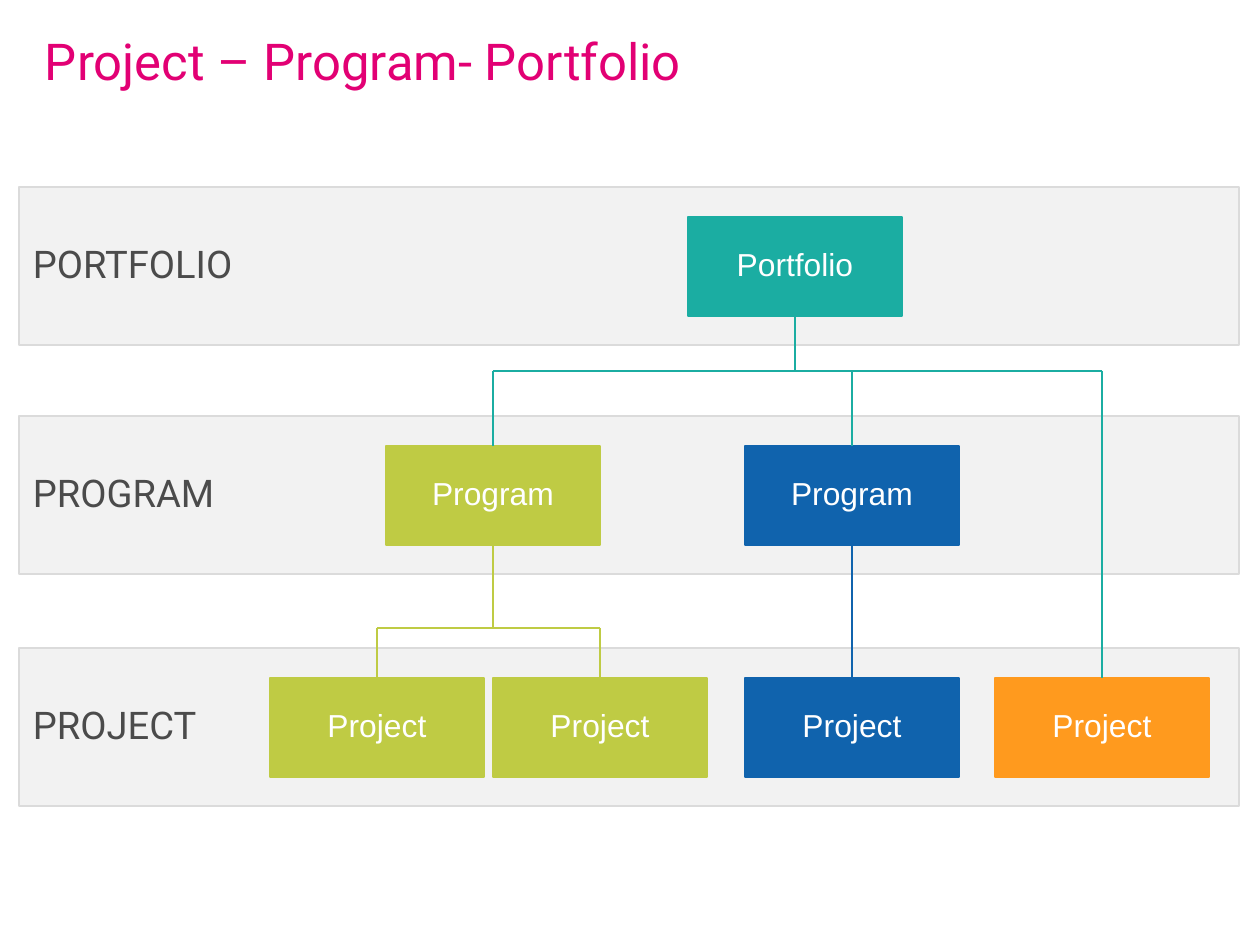
from pptx import Presentation
from pptx.dml.color import RGBColor
from pptx.enum.shapes import MSO_CONNECTOR, MSO_SHAPE
from pptx.enum.text import MSO_ANCHOR, PP_ALIGN
from pptx.util import Emu, Pt
from lxml import etree

PX = 8000
COLORS = {
    "magenta": "E20074", "band": "F2F2F2", "border": "DBDBDB", "label": "4B4B4B",
    "teal": "1BADA2", "lime": "BFCB44", "blue": "1063AD", "orange": "FF9A1E",
    "white": "FFFFFF",
}
BAND_LEFT, BAND_WIDTH, BAND_HEIGHT = 19, 1220, 158
BOX_WIDTH, BOX_HEIGHT, BOX_DROP = 214, 99, 30
INSET = 14
TOP, BOTTOM = 0, 2

deck = Presentation()
deck.slide_width, deck.slide_height = Emu(1260 * PX), Emu(945 * PX)
page = deck.slides.add_slide(deck.slide_layouts[6])


def write(shape, text, size, font, color, align, anchor, inset):
    frame = shape.text_frame
    frame.word_wrap = True
    frame.vertical_anchor = anchor
    frame.margin_left = frame.margin_right = Emu(inset * PX)
    frame.margin_top = frame.margin_bottom = Emu(inset * PX)
    para = frame.paragraphs[0]
    para.alignment = align
    para.line_spacing = 0.9
    span = para.add_run()
    span.text = text
    span.font.size = Pt(size)
    span.font.name = font
    span.font.color.rgb = RGBColor.from_string(COLORS[color])


def add_box(left, top, width, height, fill, border):
    box = page.shapes.add_shape(
        MSO_SHAPE.RECTANGLE, *(Emu(n * PX) for n in (left, top, width, height)))
    box.shadow.inherit = False
    box.fill.solid()
    box.fill.fore_color.rgb = RGBColor.from_string(COLORS[fill])
    box.line.color.rgb = RGBColor.from_string(COLORS[border])
    box.line.width = Pt(1.5)
    return box


title = page.shapes.add_textbox(*(Emu(n * PX) for n in (45, 37, 1170, 73)))
write(title, "Project – Program- Portfolio", 32, "Roboto", "magenta",
      PP_ALIGN.LEFT, MSO_ANCHOR.TOP, 0)

band_tops = {"PORTFOLIO": 187, "PROGRAM": 416, "PROJECT": 648}
for label, top in band_tops.items():
    band = add_box(BAND_LEFT, top, BAND_WIDTH, BAND_HEIGHT, "band", "border")
    write(band, label, 24, "Roboto", "label", PP_ALIGN.LEFT, MSO_ANCHOR.MIDDLE, INSET)

# Name: level, centre x, colour
nodes = {
    "portfolio": ("Portfolio", 795, "teal"),
    "lime program": ("Program", 493, "lime"),
    "blue program": ("Program", 852, "blue"),
    "lime project 1": ("Project", 377, "lime"),
    "lime project 2": ("Project", 600, "lime"),
    "blue project": ("Project", 852, "blue"),
    "orange project": ("Project", 1102, "orange"),
}
boxes = {}
for name, (level, center, color) in nodes.items():
    top = band_tops[level.upper()] + BOX_DROP
    boxes[name] = add_box(center - BOX_WIDTH // 2, top, BOX_WIDTH, BOX_HEIGHT, color, color)
    write(boxes[name], level, 20, "Arial", "white", PP_ALIGN.CENTER, MSO_ANCHOR.MIDDLE, INSET)

# Each line: start x, start y, end x, end y, colour, box above, box below
lines = [(852, 545, 852, 678, "blue", "blue program", "blue project")]
branches = [
    ("portfolio", 371, ["lime program", "blue program", "orange project"]),
    ("lime program", 628, ["lime project 1", "lime project 2"]),
]
for parent, bus, children in branches:
    level, center, color = nodes[parent]
    parent_bottom = band_tops[level.upper()] + BOX_DROP + BOX_HEIGHT
    lines.append((center, parent_bottom, center, bus, color, parent, None))
    lines.append((nodes[children[0]][1], bus, nodes[children[-1]][1], bus, color, None, None))
    for child in children:
        child_level, x, _ = nodes[child]
        child_top = band_tops[child_level.upper()] + BOX_DROP
        lines.append((x, bus, x, child_top, color, None, child))

for *ends, color, above, below in lines:
    line = page.shapes.add_connector(MSO_CONNECTOR.STRAIGHT, *(Emu(n * PX) for n in ends))
    line.line.color.rgb = RGBColor.from_string(COLORS[color])
    line.line.width = Pt(1.5)
    properties = line._element.spPr
    etree.SubElement(properties, "{http://schemas.openxmlformats.org/drawingml/2006/main}effectLst")
    if above:
        line.begin_connect(boxes[above], BOTTOM)
    if below:
        line.end_connect(boxes[below], TOP)

deck.save("out.pptx")
